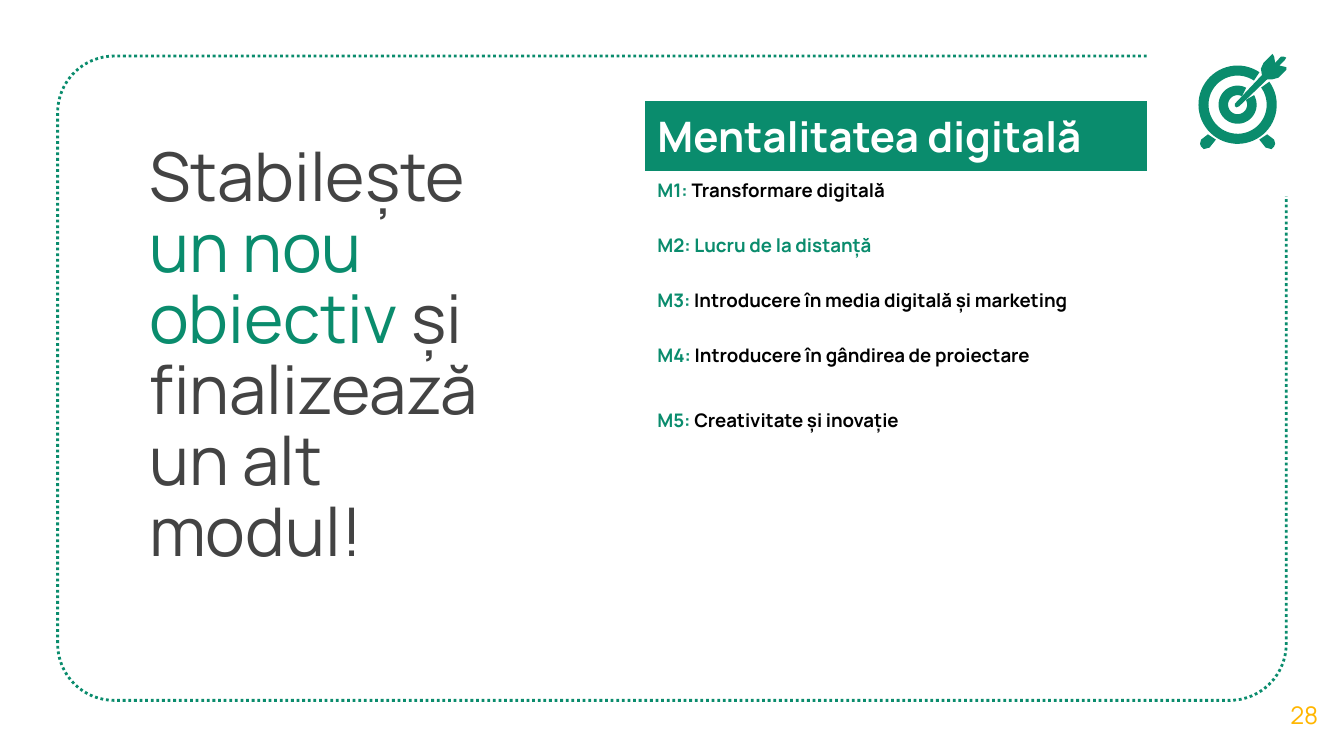
from math import cos, radians, sin

from pptx import Presentation
from pptx.dml.color import RGBColor
from pptx.enum.dml import MSO_LINE
from pptx.enum.text import MSO_ANCHOR, MSO_AUTO_SIZE, PP_ALIGN
from pptx.util import Cm, Pt

GREEN = RGBColor(0x0A, 0x8C, 0x6D)
GREY = RGBColor(0x43, 0x43, 0x43)
YELLOW = RGBColor(0xFF, 0xB6, 0x00)
WHITE = RGBColor(0xFF, 0xFF, 0xFF)
BLACK = RGBColor(0, 0, 0)
DOTTED = MSO_LINE.ROUND_DOT
TOP, MIDDLE = MSO_ANCHOR.TOP, MSO_ANCHOR.MIDDLE
CENTER = PP_ALIGN.CENTER
NO_AUTOFIT = MSO_AUTO_SIZE.NONE
FONT = "Manrope"
INSET = Cm(0.25)

TITLE = [("Stabilește ", GREY), ("un nou obiectiv ", GREEN),
         ("și finalizează un alt modul!", GREY)]
HEADING = "Mentalitatea digitală"
MODULES = [
    ("M1: ", "Transformare digitală", BLACK),
    ("M2: ", "Lucru de la distanță", GREEN),
    ("M3: ", "Introducere în media digitală și marketing", BLACK),
    ("M4: ", "Introducere în gândirea de proiectare", BLACK),
    ("M5: ", "Creativitate și inovație", BLACK),
]
PAGE_NUMBER = "28"

# Table, in cm
TABLE_LEFT, TABLE_TOP, TABLE_WIDTH = 12.17, 1.9, 9.53
ROW_HEIGHTS = [1.34, 1.04, 1.04, 1.04, 1.22, 1.04]

# Dotted frame, in cm; it stays open around the target in the top right corner
FRAME_LEFT, FRAME_TOP, FRAME_RIGHT, FRAME_BOTTOM = 1.09, 1.06, 24.31, 13.24
CORNER = 1.07
FRAME_START = (21.67, FRAME_TOP)
FRAME_END = (FRAME_RIGHT, 3.71)

# Target icon, in cm: rings are outer radius, inner radius, gap in degrees
TARGET_X, TARGET_Y = 23.39, 1.98
RINGS = [(0.74, 0.55, -56, -36), (0.36, 0.18, -63, -30)]
LEG = [(0.56, 0.56), (0.69, 0.66), (0.71, 0.74), (0.69, 0.79),
       (0.64, 0.84), (0.53, 0.81), (0.41, 0.66)]
DART = [(24.05, 1.02), (23.88, 1.19), (23.83, 1.3), (23.85, 1.42),
        (23.34, 1.96), (23.34, 2.01), (23.37, 2.03), (23.42, 2.01),
        (23.95, 1.5), (24.05, 1.5), (24.16, 1.47), (24.31, 1.32),
        (24.31, 1.27), (24.18, 1.24), (24.28, 1.14), (24.31, 1.09),
        (24.26, 1.07), (24.21, 1.07), (24.1, 1.19), (24.08, 1.07)]


def arc(x, y, radius, start, end, steps):
    """Points on a circle, with angles in degrees clockwise from the right."""
    angles = [radians(start + (end - start) * i / steps) for i in range(steps + 1)]
    return [(x + radius * cos(a), y + radius * sin(a)) for a in angles]


def add_outline(page, points, close=True):
    corners = [(Cm(x), Cm(y)) for x, y in points]
    builder = page.shapes.build_freeform(*corners[0], scale=1.0)
    builder.add_line_segments(corners[1:], close=close)
    shape = builder.convert_to_shape()
    shape.shadow.inherit = False
    return shape


def add_frame(page):
    left, right = FRAME_LEFT + CORNER, FRAME_RIGHT - CORNER
    top, bottom = FRAME_TOP + CORNER, FRAME_BOTTOM - CORNER
    points = [FRAME_START,
              *arc(left, top, CORNER, 270, 180, 16),
              *arc(left, bottom, CORNER, 180, 90, 16),
              *arc(right, bottom, CORNER, 90, 0, 16),
              FRAME_END]
    frame = add_outline(page, points, close=False)
    frame.fill.background()
    frame.line.color.rgb = GREEN
    frame.line.width = Pt(1.5)
    frame.line.dash_style = DOTTED


def add_target(page):
    outlines = [DART]
    for outer, inner, gap_start, gap_end in RINGS:
        outlines.append(
            arc(TARGET_X, TARGET_Y, outer, gap_end, gap_start + 360, 60)
            + arc(TARGET_X, TARGET_Y, inner, gap_start + 360, gap_end, 60))
    for side in (-1, 1):
        outlines.append([(TARGET_X + side * x, TARGET_Y + y) for x, y in LEG])
    for outline in outlines:
        part = add_outline(page, outline)
        part.fill.solid()
        part.fill.fore_color.rgb = GREEN
        part.line.fill.background()


def write(paragraph, spans, size, bold=False):
    for text, color in spans:
        span = paragraph.add_run()
        span.text = text
        span.font.name = FONT
        span.font.size = Pt(size)
        span.font.bold = bold
        span.font.color.rgb = color


def place(box, left, top, width, height, anchor):
    """Move a text shape and give it its margins and wrapping."""
    box.left, box.top, box.width, box.height = map(Cm, (left, top, width, height))
    frame = box.text_frame
    frame.word_wrap = True
    frame.auto_size = NO_AUTOFIT
    frame.vertical_anchor = anchor
    frame.margin_left = frame.margin_right = INSET
    frame.margin_top = frame.margin_bottom = INSET
    return frame.paragraphs[0]


def add_modules(page):
    rows = [([(HEADING, WHITE)], 22.5)]
    rows += [([(code, GREEN), (name, color)], 10) for code, name, color in MODULES]
    table = page.shapes.add_table(
        len(rows), 1, Cm(TABLE_LEFT), Cm(TABLE_TOP),
        Cm(TABLE_WIDTH), Cm(sum(ROW_HEIGHTS))).table
    table.first_row = table.horz_banding = False
    for index, (spans, size) in enumerate(rows):
        table.rows[index].height = Cm(ROW_HEIGHTS[index])
        cell = table.cell(index, 0)
        if index == 0:
            cell.fill.solid()
            cell.fill.fore_color.rgb = GREEN
        else:
            cell.fill.background()
        write(cell.text_frame.paragraphs[0], spans, size, bold=True)


def main():
    deck = Presentation()
    deck.slide_width, deck.slide_height = Cm(25.4), Cm(14.29)
    page = deck.slides.add_slide(deck.slide_layouts.get_by_name("Title Only"))

    add_frame(page)
    title = place(page.shapes.title, 2.57, 2.49, 7.54, 2.39, TOP)
    title.alignment = PP_ALIGN.LEFT
    title.line_spacing = 0.88
    write(title, TITLE, 36)

    number = place(page.shapes.add_textbox(0, 0, 0, 0), 23.9, 12.75, 1.5, 1.52, MIDDLE)
    number.alignment = CENTER
    write(number, [(PAGE_NUMBER, YELLOW)], 13)

    add_target(page)
    add_modules(page)
    deck.save("out.pptx")


if __name__ == "__main__":
    main()
